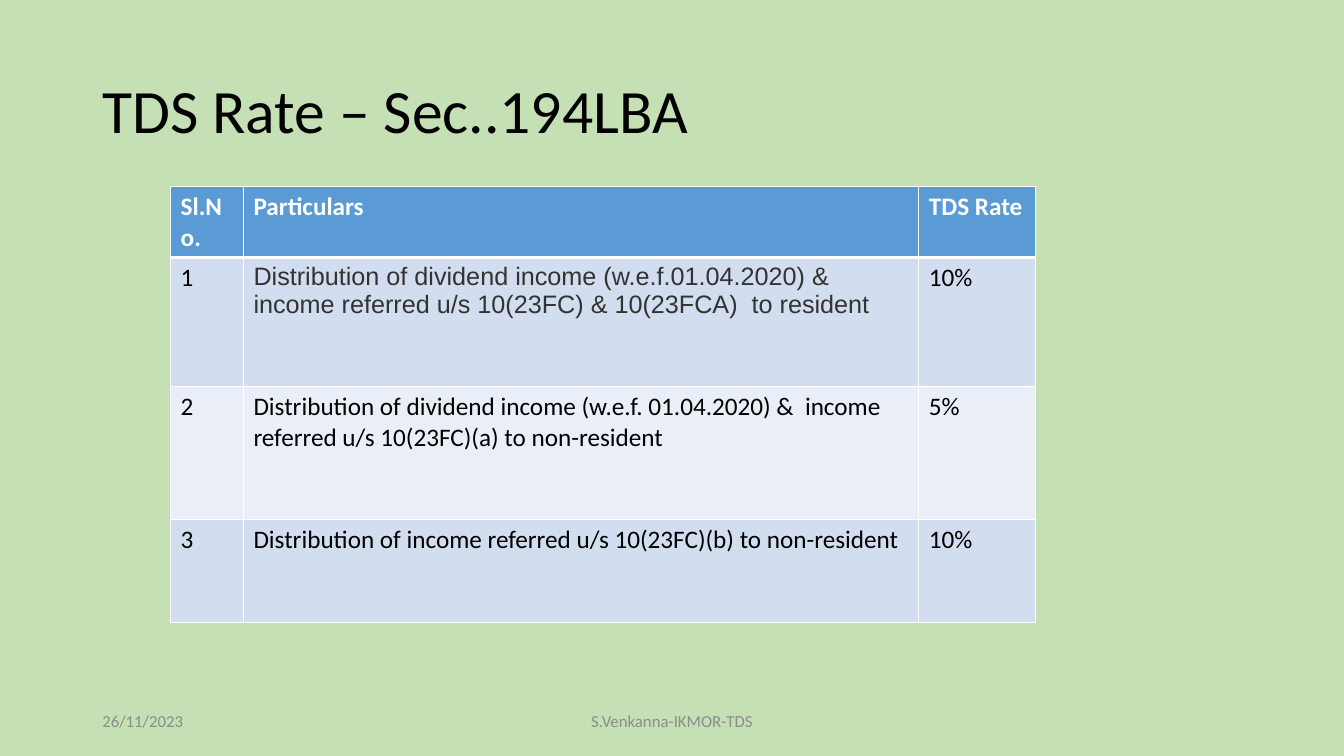
from dataclasses import dataclass

from lxml.etree import SubElement
from pptx import Presentation
from pptx.dml.color import RGBColor as Rgb
from pptx.enum.text import MSO_ANCHOR as Anchor, PP_ALIGN as Align
from pptx.oxml.ns import qn
from pptx.util import Pt


@dataclass(frozen=True)
class Theme:
    """Colours, fonts and type sizes of the slide."""
    background: str = "C5E0B4"
    ink: str = "000000"
    soft_ink: str = "333333"
    footer_ink: str = "8C8C8C"
    white: str = "FFFFFF"
    header_fill: str = "5B9BD5"
    odd_fill: str = "D2DEEF"
    even_fill: str = "EAEFF7"
    font: str = "Calibri"
    accent_font: str = "Arial"
    title_size: float = 44
    table_size: float = 18
    footer_size: float = 12


THEME = Theme()
COLUMN_WIDTHS = (52, 482.5, 83)
ROW_HEIGHTS = (50.7, 92.2, 95, 73.5)
RATES = (
    ("Sl.No.", "Particulars", "TDS Rate"),
    ("1", "Distribution of dividend income (w.e.f.01.04.2020) & "
          "income referred u/s 10(23FC) & 10(23FCA)  to resident", "10%"),
    ("2", "Distribution of dividend income (w.e.f. 01.04.2020) &  income "
          "referred u/s 10(23FC)(a) to non-resident", "5%"),
    ("3", "Distribution of income referred u/s 10(23FC)(b) to non-resident", "10%"),
)


def write(frame, wording, size, color, font=THEME.font, bold=False):
    """Put one styled paragraph into a text frame and return it."""
    frame.text = wording
    frame.word_wrap = True
    paragraph = frame.paragraphs[0]
    style = paragraph.runs[0].font
    style.name, style.size, style.bold = font, Pt(size), bold
    style.color.rgb = Rgb.from_string(color)
    return paragraph


def add_line_of_text(slide, box, wording, size, color, align=Align.LEFT):
    """Add a vertically centred text box filling the given box."""
    label = slide.shapes.add_textbox(*map(Pt, box))
    label.text_frame.vertical_anchor = Anchor.MIDDLE
    paragraph = write(label.text_frame, wording, size, color)
    paragraph.alignment = align
    return paragraph


def add_title(slide, box):
    """Add the slide heading."""
    heading = add_line_of_text(slide, box, "TDS Rate – Sec..194LBA",
                               THEME.title_size, THEME.ink)
    heading.line_spacing = 0.9


def set_borders(cell, bottom_width):
    """Draw white borders around a cell."""
    properties = cell._tc.get_or_add_tcPr()
    for side, width in (("L", 1), ("R", 1), ("T", 1), ("B", bottom_width)):
        border = SubElement(properties, qn(f"a:ln{side}"), w=str(Pt(width)))
        paint = SubElement(border, qn("a:solidFill"))
        SubElement(paint, qn("a:srgbClr"), val=THEME.white)


def add_rate_table(slide, left, top):
    """Add the table of TDS rates with its top left corner at the given point."""
    table = slide.shapes.add_table(
        len(RATES), len(COLUMN_WIDTHS), Pt(left), Pt(top),
        Pt(sum(COLUMN_WIDTHS)), Pt(sum(ROW_HEIGHTS))).table
    for column, width in zip(table.columns, COLUMN_WIDTHS):
        column.width = Pt(width)
    for number, (row, height, wordings) in enumerate(zip(table.rows, ROW_HEIGHTS, RATES)):
        row.height = Pt(height)
        is_header = number == 0
        band = THEME.odd_fill if number % 2 else THEME.even_fill
        for cell, wording in zip(row.cells, wordings):
            set_borders(cell, 3 if is_header else 1)
            cell.fill.solid()
            cell.fill.fore_color.rgb = Rgb.from_string(
                THEME.header_fill if is_header else band)
            write(cell.text_frame, wording, THEME.table_size,
                  THEME.white if is_header else THEME.ink, bold=is_header)
    resident_income = table.cell(1, 1).text_frame
    write(resident_income, RATES[1][1], THEME.table_size,
          THEME.soft_ink, THEME.accent_font)


def add_footer(slide, left, top, height):
    """Add the date and the centred author line."""
    add_line_of_text(slide, (left, top, 216, height), "26/11/2023",
                     THEME.footer_size, THEME.footer_ink)
    add_line_of_text(slide, (left + 252, top, 324, height), "S.Venkanna-IKMOR-TDS",
                     THEME.footer_size, THEME.footer_ink, Align.CENTER)


def main():
    """Build and save the slide."""
    deck = Presentation()
    deck.slide_width, deck.slide_height = Pt(960), Pt(540)
    slide = deck.slides.add_slide(deck.slide_layouts[6])
    slide.background.fill.solid()
    slide.background.fill.fore_color.rgb = Rgb.from_string(THEME.background)
    add_title(slide, (66, 28.75, 828, 104.4))
    add_rate_table(slide, 121.9, 133.2)
    add_footer(slide, 66, 500.5, 28.75)
    deck.save("out.pptx")


if __name__ == "__main__":
    main()
